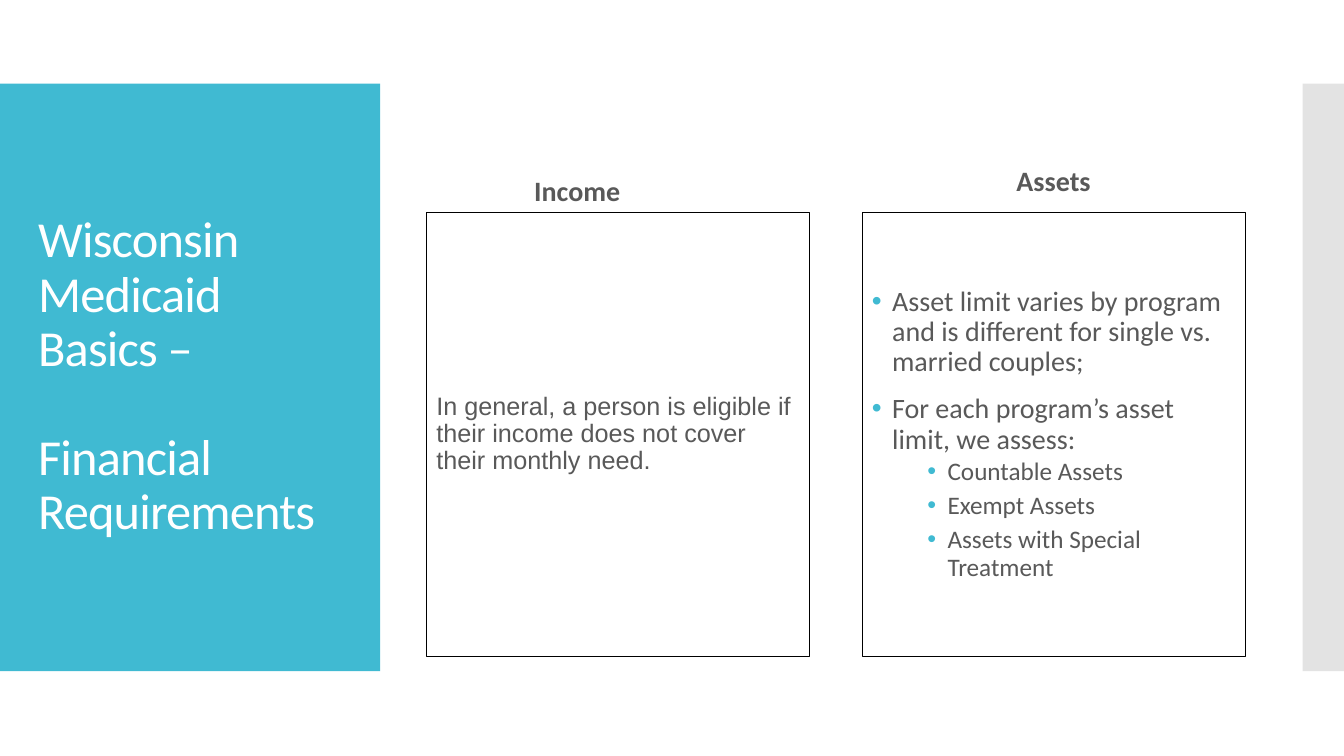
from lxml import etree
from pptx import Presentation
from pptx.dml.color import RGBColor
from pptx.enum.shapes import MSO_SHAPE
from pptx.enum.text import MSO_ANCHOR, PP_ALIGN
from pptx.oxml.ns import qn
from pptx.util import Inches, Pt

RECT = MSO_SHAPE.RECTANGLE
MIDDLE, BOTTOM = MSO_ANCHOR.MIDDLE, MSO_ANCHOR.BOTTOM
LEFT, CENTER = PP_ALIGN.LEFT, PP_ALIGN.CENTER

COLORS = {"teal": "40BAD2", "grey": "C8C8C8", "text": "595959",
          "white": "FFFFFF", "black": "000000"}

TITLE = ["Wisconsin Medicaid Basics –", "Financial Requirements"]
HEADINGS = [
    {"text": "Income", "at": (4.9, 1.23, 3.8, 0.88), "align": LEFT, "indent": 0.3},
    {"text": "Assets", "at": (8.55, 1.12, 3.8, 0.89), "align": CENTER, "indent": 0},
]
INCOME = "In general, a person is eligible if their income does not cover their monthly need."
ASSETS = [
    (0, "Asset limit varies by program and is different for single vs. married couples;"),
    (0, "For each program’s asset limit, we assess:"),
    (1, "Countable Assets"),
    (1, "Exempt Assets"),
    (1, "Assets with Special Treatment"),
]
LEVELS = [
    {"size": 20, "indent": 0.2, "before": 12, "after": 0},
    {"size": 18, "indent": 0.75, "before": 2.5, "after": 2.5},
]
BAND_TOP, BAND_HEIGHT = 0.83, 5.83
PANEL_LEFTS, PANEL_TOP, PANEL_SIZE = (4.23, 8.55), 2.11, (3.8, 4.4)
HANG = 0.2


def color(name):
    return RGBColor.from_string(COLORS[name])


def add_rect(slide, at, fill=None, line=None):
    sp = slide.shapes.add_shape(RECT, *map(Inches, at))
    sp.shadow.inherit = False
    if fill:
        sp.fill.solid()
        sp.fill.fore_color.rgb = color(fill)
    else:
        sp.fill.background()
    if line:
        sp.line.color.rgb = color(line)
        sp.line.width = Pt(0.75)
    else:
        sp.line.fill.background()
    return sp


def setup_frame(sp, anchor):
    tf = sp.text_frame
    tf.word_wrap = True
    tf.vertical_anchor = anchor
    return tf


def add_text(tf, text, size, font="Calibri", ink="text", bold=False,
             align=LEFT, before=0, after=0, indent=0):
    p = tf.add_paragraph() if tf.text else tf.paragraphs[0]
    p.text = text
    p.alignment = align
    p.line_spacing = 0.9
    p.space_before, p.space_after = Pt(before), Pt(after)
    p.font.size, p.font.name, p.font.bold = Pt(size), font, bold
    p.font.color.rgb = color(ink)
    p._p.get_or_add_pPr().set("marL", str(Inches(indent)))
    return p


def add_bullet(p):
    pPr = p._p.get_or_add_pPr()
    pPr.set("indent", str(-Inches(HANG)))
    clr = etree.Element(qn("a:buClr"))
    etree.SubElement(clr, qn("a:srgbClr"), val=COLORS["teal"])
    font = etree.Element(qn("a:buFont"), typeface="Arial")
    char = etree.Element(qn("a:buChar"), char="•")
    at = pPr.index(pPr.find(qn("a:defRPr")))
    pPr[at:at] = [clr, font, char]


def main():
    """Build the financial requirements slide."""
    prs = Presentation()
    prs.slide_width, prs.slide_height = Inches(13.33), Inches(7.5)
    s = prs.slides.add_slide(prs.slide_layouts[6])

    add_rect(s, (0, BAND_TOP, 3.77, BAND_HEIGHT), "teal")
    edge = add_rect(s, (12.92, BAND_TOP, 0.41, BAND_HEIGHT), "grey")
    rgb = edge._element.spPr.find(qn("a:solidFill")).find(qn("a:srgbClr"))
    etree.SubElement(rgb, qn("a:alpha"), val="50000")

    title = s.shapes.add_textbox(*map(Inches, (0.28, 1.23, 3.22, 5.03)))
    tf = setup_frame(title, MIDDLE)
    for i, line in enumerate(TITLE):
        p = add_text(tf, line, 36, ink="white", before=39 * i)
        p.runs[0].font._element.set("spc", "-60")

    for h in HEADINGS:
        box = s.shapes.add_textbox(*map(Inches, h["at"]))
        add_text(setup_frame(box, BOTTOM), h["text"], 20, bold=True,
                 align=h["align"], indent=h["indent"])

    income, assets = [
        setup_frame(add_rect(s, (x, PANEL_TOP, *PANEL_SIZE), line="black"), MIDDLE)
        for x in PANEL_LEFTS]
    add_text(income, INCOME, 18, font="Arial", before=12)
    for level, text in ASSETS:
        p = add_text(assets, text, **LEVELS[level])
        p.level = level
        add_bullet(p)

    prs.save("out.pptx")


if __name__ == "__main__":
    main()
